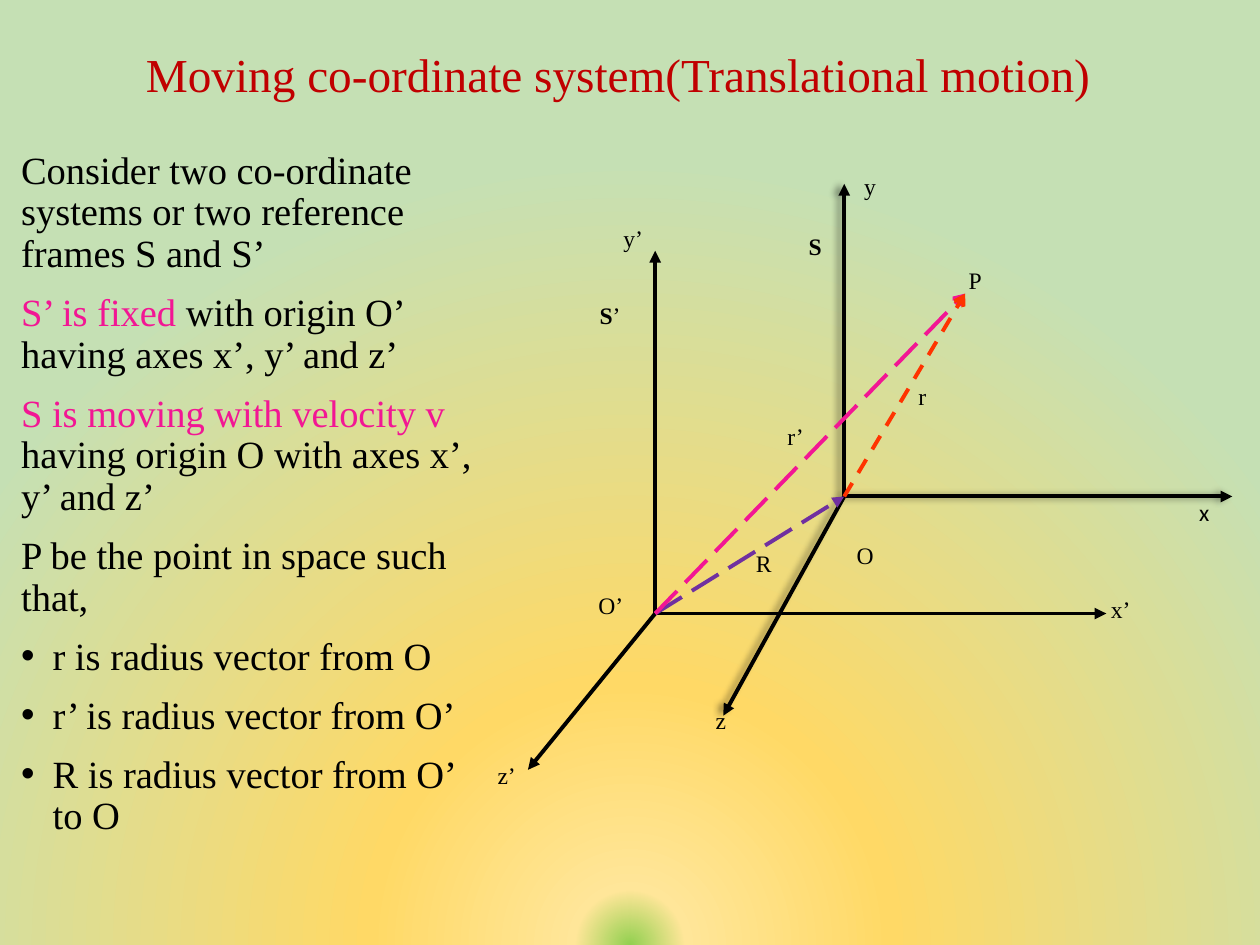
from lxml import etree
from pptx import Presentation
from pptx.dml.color import RGBColor
from pptx.enum import dml, text
from pptx.enum.shapes import MSO_CONNECTOR
from pptx.oxml import parse_xml
from pptx.oxml.ns import nsdecls, qn
from pptx.util import Pt

SERIF = "Times New Roman"
BLACK, RED, PINK, PURPLE, ORANGE = "000000", "C00000", "F21694", "7030A0", "FF3300"
BACKGROUND_STOPS = [(0, "92D050"), (7, "FFE699"), (33, "FFD966"), (100, "C5E0B4")]

# Paragraphs of (text, colour) runs, with a flag for a bullet
BODY = [
    (False, [("Consider two co-ordinate systems or two reference frames S and S’", BLACK)]),
    (False, [("S’ is fixed ", PINK), ("with origin O’ having axes x’, y’ and z’", BLACK)]),
    (False, [("S is moving with velocity v ", PINK),
             ("having origin O with axes x’, y’ and z’", BLACK)]),
    (False, [("P be the point in space such that,", BLACK)]),
    (True, [("r is radius vector from O", BLACK)]),
    (True, [("r’ is radius vector from O’", BLACK)]),
    (True, [("R is radius vector from O’ to O", BLACK)]),
]

# Points are relative to the diagram box
FIXED_ORIGIN, MOVING_ORIGIN, POINT_P = (97.4, 255.6), (205.4, 188.7), (274.5, 72.8)
FIXED_AXES = [(355.2, 255.6), (97.4, 48.3), (24.7, 344.9)]
MOVING_AXES = [(427.2, 188.7), (205.4, 10.1), (136.3, 314)]
VECTORS = [
    (FIXED_ORIGIN, MOVING_ORIGIN, PURPLE, dml.MSO_LINE.LONG_DASH, "triangle"),
    (FIXED_ORIGIN, POINT_P, PINK, dml.MSO_LINE.LONG_DASH, "arrow"),
    (MOVING_ORIGIN, POINT_P, ORANGE, dml.MSO_LINE.DASH, "arrow"),
]
# Text, left, top, width
LABELS = [
    ("P", 269.5, 53.3, 20), ("S", 178, 33.9, 21), ("S’", 58.5, 73.5, 32.4),
    ("O’", 57.8, 239.1, 37.4), ("O", 205.4, 210.3, 51), ("r’", 165.8, 142.6, 34),
    ("r", 240.7, 119.6, 31), ("R", 147.8, 215.3, 34.6), ("z’", 0.2, 336.3, 35.3),
    ("z", 124.8, 304.6, 35.3), ("y’", 72.2, 29.6, 31), ("x’", 350.8, 241.2, 40.3),
    ("x", 401.2, 185.8, 31.7), ("y", 209.7, 0, 42.5),
]


def colour(value):
    return RGBColor.from_string(value)


def set_attributes(target, **values):
    for name, value in values.items():
        setattr(target, name, value)


def add_run(paragraph, words, size, shade=BLACK, name=SERIF, bold=False):
    run = paragraph.add_run()
    run.text = words
    set_attributes(run.font, size=Pt(size), name=name, bold=bold)
    run.font.color.rgb = colour(shade)


def add_text_frame(slide, left, top, width, height, **values):
    box = slide.shapes.add_textbox(Pt(left), Pt(top), Pt(width), Pt(height))
    set_attributes(box.text_frame, word_wrap=True, **values)
    return box.text_frame


def add_background(slide):
    """Fill the slide with a circular gradient centred below its lower edge."""
    stops = "".join(
        f'<a:gs pos="{position * 1000}"><a:srgbClr val="{value}"/></a:gs>'
        for position, value in BACKGROUND_STOPS)
    gradient = parse_xml(
        f'<a:gradFill {nsdecls("a")} rotWithShape="1"><a:gsLst>{stops}</a:gsLst>'
        '<a:path path="circle"><a:fillToRect l="50000" t="130000" r="50000" b="-30000"/>'
        '</a:path></a:gradFill>')
    slide.background.fill.solid()
    solid = slide.element.find(".//" + qn("p:bgPr")).find(qn("a:solidFill"))
    solid.getparent().replace(solid, gradient)


def add_title(slide, left, top, width, height):
    frame = add_text_frame(slide, left, top, width, height,
                           vertical_anchor=text.MSO_ANCHOR.MIDDLE)
    paragraph = frame.paragraphs[0]
    set_attributes(paragraph, alignment=text.PP_ALIGN.CENTER, line_spacing=0.9)
    add_run(paragraph, "Moving co-ordinate system(Translational motion)", 27, RED)


def add_bullet(paragraph):
    properties = paragraph._p.get_or_add_pPr()
    properties.set("marL", str(Pt(18)))
    properties.set("indent", str(-Pt(18)))
    etree.SubElement(properties, qn("a:buFont")).set("typeface", "Arial")
    etree.SubElement(properties, qn("a:buChar")).set("char", "•")


def add_body(slide, left, top, width, height):
    frame = add_text_frame(slide, left, top, width, height)
    for index, (bulleted, runs) in enumerate(BODY):
        paragraph = frame.add_paragraph() if index else frame.paragraphs[0]
        set_attributes(paragraph, line_spacing=0.9, space_before=Pt(10))
        if bulleted:
            add_bullet(paragraph)
        for words, shade in runs:
            add_run(paragraph, words, 22, shade)


def add_arrow(slide, start, end, shade=BLACK, dash=None, head="triangle", shadow=False):
    arrow = slide.shapes.add_connector(
        MSO_CONNECTOR.STRAIGHT, *(Pt(value) for value in (*start, *end)))
    arrow.line.color.rgb = colour(shade)
    set_attributes(arrow.line, width=Pt(2.25), dash_style=dash)
    properties = arrow._element.spPr
    etree.SubElement(properties.find(qn("a:ln")), qn("a:tailEnd")).set("type", head)
    effects = etree.SubElement(properties, qn("a:effectLst"))
    if shadow:
        effects.append(parse_xml(
            f'<a:outerShdw {nsdecls("a")} blurRad="{Pt(4)}" dist="{Pt(3)}" dir="10800000" '
            'algn="r" rotWithShape="0"><a:srgbClr val="000000"><a:alpha val="40000"/>'
            '</a:srgbClr></a:outerShdw>'))


def add_label(slide, words, left, top, width):
    height = 53.3 if words in ("S’", "O’", "y’") else 31.7
    frame = add_text_frame(slide, left, top, width, height,
                           auto_size=text.MSO_AUTO_SIZE.SHAPE_TO_FIT_TEXT)
    for letter in words:
        add_run(frame.paragraphs[0], letter, 13.5, bold=letter == "S",
                name="Calibri" if words == "x" else SERIF)


def add_diagram(slide, left, top):
    def place(point):
        return left + point[0], top + point[1]

    for origin, ends, shadow in ((FIXED_ORIGIN, FIXED_AXES, False),
                                 (MOVING_ORIGIN, MOVING_AXES, True)):
        for end in ends:
            add_arrow(slide, place(origin), place(end), shadow=shadow)
    for start, end, *style in VECTORS:
        add_arrow(slide, place(start), place(end), *style)
    for words, x, y, width in LABELS:
        add_label(slide, words, *place((x, y)), width)


def main():
    presentation = Presentation()
    set_attributes(presentation, slide_width=Pt(720), slide_height=Pt(540))
    slide = presentation.slides.add_slide(presentation.slide_layouts[6])
    add_background(slide)
    add_title(slide, 31.7, 6.5, 643, 75.6)
    add_body(slide, 5, 82.8, 272.5, 437.8)
    add_diagram(slide, 277, 95)
    presentation.save("out.pptx")


if __name__ == "__main__":
    main()
